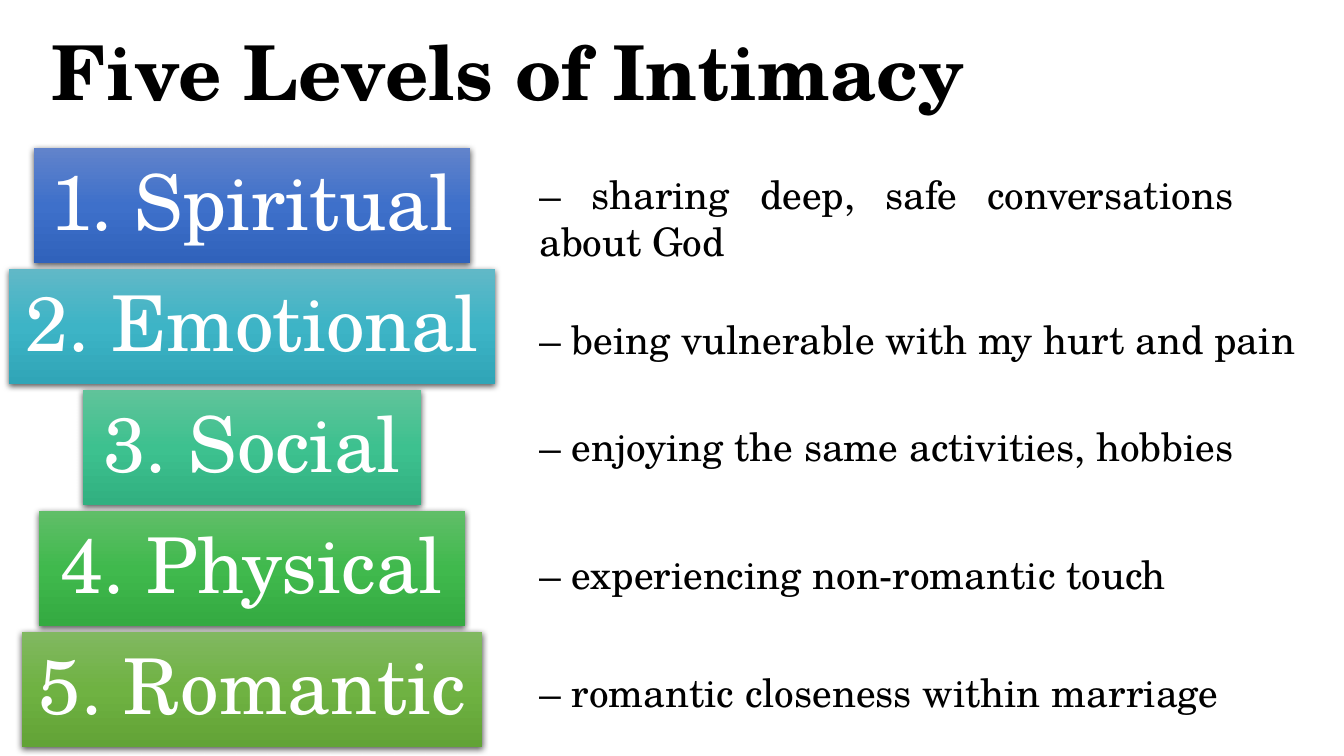
from copy import deepcopy
from dataclasses import dataclass

from lxml import etree
from pptx import Presentation, util as u
from pptx.dml.color import RGBColor
from pptx.enum import shapes, text
from pptx.oxml import parse_xml
from pptx.oxml.ns import nsdecls, qn


@dataclass(frozen=True)
class Theme:
    font: str = "TeX Gyre Schola"
    ink: str = "000000"
    light: str = "FFFFFF"
    title_size: int = 54
    level_size: int = 55
    note_size: int = 28


theme = Theme()
SHADOW = (
    f'<a:effectLst {nsdecls("a")}>'
    '<a:outerShdw blurRad="57150" dist="19050" dir="5400000" algn="ctr" rotWithShape="0">'
    f'<a:srgbClr val="{theme.ink}"><a:alpha val="63000"/></a:srgbClr>'
    "</a:outerShdw></a:effectLst>"
)


def write(shape, words, size, color, frame_format, para_format):
    """Fill the shape with one formatted paragraph."""
    frame = shape.text_frame
    for name, value in frame_format.items():
        setattr(frame, name, value)
    para = frame.paragraphs[0]
    for name, value in para_format.items():
        setattr(para, name, value)
    span = para.add_run()
    span.text = words
    font_format = {"name": theme.font, "size": u.Pt(size)}
    for name, value in font_format.items():
        setattr(span.font, name, value)
    span.font.color.rgb = RGBColor.from_string(color)
    return span


def paint(shape, colors):
    """Give the shape an even top-to-bottom gradient, no outline and a soft shadow."""
    shape.fill.gradient()
    shape.fill.gradient_angle = 270
    properties = shape._element.spPr
    stop_list = properties.find(".//" + qn("a:gsLst"))
    stop_list.append(deepcopy(stop_list[0]))
    for index, (stop, color) in enumerate(zip(shape.fill.gradient_stops, colors)):
        stop.position = index / (len(colors) - 1)
        stop.color.rgb = RGBColor.from_string(color)
    shape.line.fill.background()
    properties.append(parse_xml(SHADOW))


deck = Presentation()
deck.slide_width, deck.slide_height = u.Inches(13.33), u.Inches(7.5)
page = deck.slides.add_slide(deck.slide_layouts[6])

title = page.shapes.add_textbox(u.Inches(0.41), u.Inches(0.03), u.Inches(12.51), u.Inches(1.45))
title_span = write(
    title, "Five Levels of Intimacy", theme.title_size, theme.ink,
    {"word_wrap": True, "vertical_anchor": text.MSO_ANCHOR.MIDDLE},
    {"line_spacing": 0.9},
)
title_span.font.bold = True

# Banner text, width and gradient; then note text, top, width, height and line spacing
levels = [
    ("1. Spiritual", 4.33, ("6183CB", "3E70CA", "3062BB"),
     "– sharing deep, safe conversations about God", 1.64, 7.08, 1.21, 1.0),
    ("2. Emotional", 4.82, ("61B8C7", "3DB4C6", "30A5B7"),
     "– being vulnerable with my hurt and pain", 3.01, 7.82, 0.7, 1.14),
    ("3. Social", 3.35, ("60C39A", "3DC18F", "31B080"),
     "– enjoying the same activities, hobbies", 4.08, 7.82, 0.7, 1.14),
    ("4. Physical", 4.23, ("60BE68", "40B94D", "34AA41"),
     "– experiencing non-romantic touch", 5.35, 7.82, 0.7, 1.14),
    ("5. Romantic", 4.57, ("81B861", "6FB242", "62A336"),
     "– romantic closeness within marriage", 6.54, 7.82, 0.7, 1.08),
]
CENTER, FIRST_TOP, STEP, BANNER_HEIGHT, NOTE_LEFT = 2.5, 1.47, 1.2, 1.14, 5.25
banner_frame = {
    "word_wrap": False,
    "vertical_anchor": text.MSO_ANCHOR.MIDDLE,
    **{f"margin_{side}": u.Inches(0.15) for side in ("left", "top", "right", "bottom")},
}

for row, (level, width, colors, note, top, note_width, note_height, spacing) in enumerate(levels):
    banner = page.shapes.add_shape(
        shapes.MSO_SHAPE.RECTANGLE,
        u.Inches(CENTER - width / 2), u.Inches(FIRST_TOP + row * STEP),
        u.Inches(width), u.Inches(BANNER_HEIGHT),
    )
    paint(banner, colors)
    write(banner, level, theme.level_size, theme.light, banner_frame,
          {"alignment": text.PP_ALIGN.CENTER, "line_spacing": 0.9})

    box = page.shapes.add_textbox(
        u.Inches(NOTE_LEFT), u.Inches(top), u.Inches(note_width), u.Inches(note_height)
    )
    write(box, note, theme.note_size, theme.ink, {"word_wrap": True},
          {"alignment": text.PP_ALIGN.JUSTIFY, "line_spacing": spacing})

deck.save("out.pptx")
